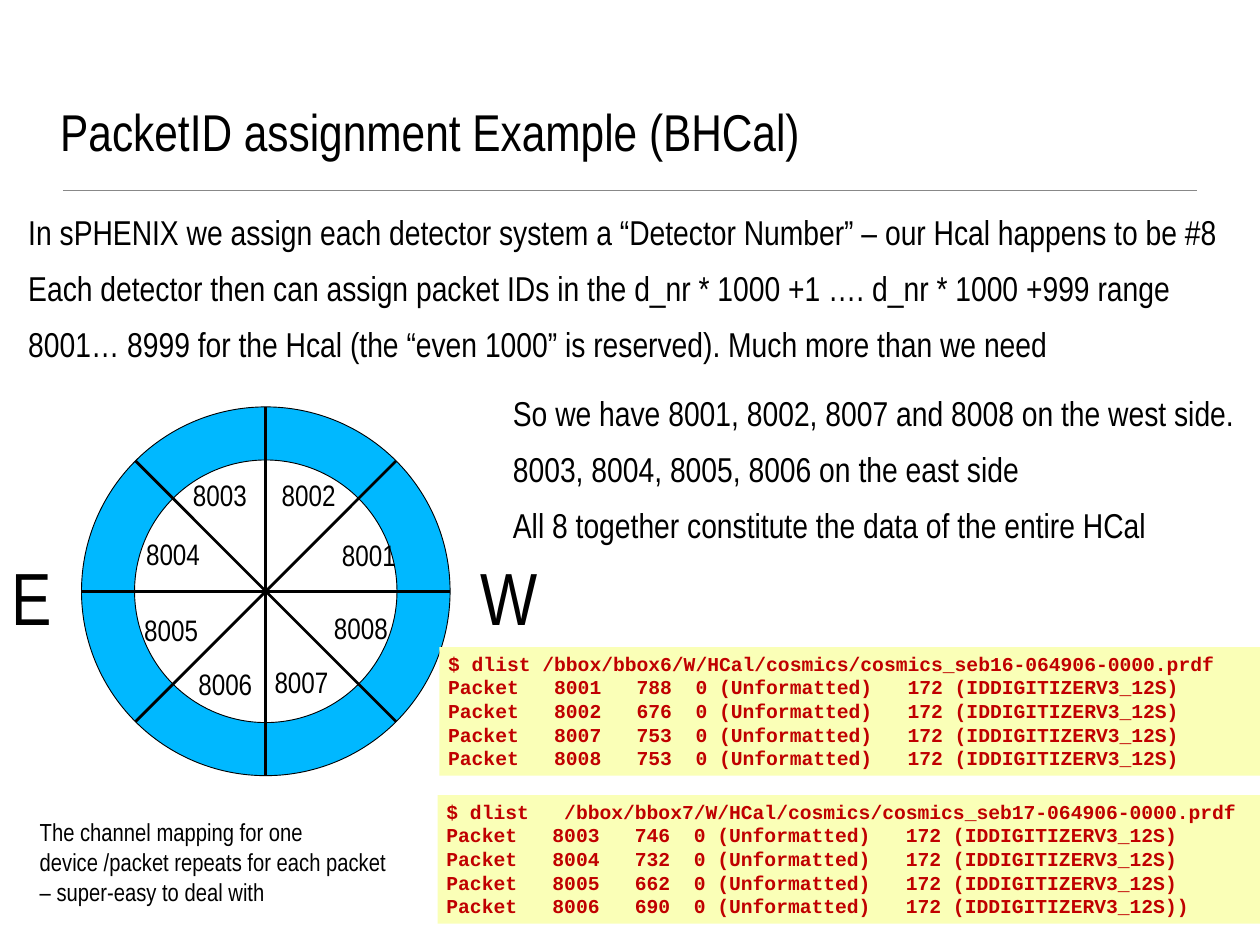
from dataclasses import dataclass
from math import cos, pi, sin

from lxml.etree import SubElement
from pptx import Presentation
from pptx.dml.color import RGBColor
from pptx.enum.shapes import MSO_CONNECTOR, MSO_SHAPE
from pptx.enum.text import MSO_ANCHOR, PP_ALIGN
from pptx.oxml.ns import qn
from pptx.util import Emu, Pt

EMU_PER_PX = 9144


def px(n):
    return Emu(round(n * EMU_PER_PX))


@dataclass(frozen=True)
class Theme:
    font: str = "Arial Narrow"
    code_font: str = "Courier New"
    ink: str = "000000"
    rule: str = "888888"
    ring: str = "00B8FF"
    code_fill: str = "FAFFB7"
    code_ink: str = "C00000"
    title: int = 42
    body: int = 28
    label: int = 24
    note: int = 20
    code: int = 16
    side: int = 60


class Deck:
    def __init__(self, theme, width, height):
        self.theme = theme
        self.prs = Presentation()
        self.prs.slide_width, self.prs.slide_height = px(width), px(height)
        self.slide = self.prs.slides.add_slide(self.prs.slide_layouts[6])

    def fill_text(self, tf, lines, size, font, color, bold=False, after=0):
        tf.word_wrap = True
        for i, line in enumerate(lines):
            p = tf.paragraphs[0] if i == 0 else tf.add_paragraph()
            p.text = line
            p.alignment = PP_ALIGN.LEFT
            p.space_after = Pt(after)
            p.font.size = Pt(size)
            p.font.name = font
            p.font.bold = bold
            p.font.color.rgb = RGBColor.from_string(color)

    def text(self, x, y, w, h, lines, size, after=0):
        tf = self.slide.shapes.add_textbox(px(x), px(y), px(w), px(h)).text_frame
        self.fill_text(tf, lines, size, self.theme.font, self.theme.ink, after=after)
        return tf

    def title(self, x, y, w, h, line):
        tf = self.text(x, y, w, h, [line], self.theme.title)
        tf.vertical_anchor = MSO_ANCHOR.BOTTOM
        tf.margin_left = tf.margin_right = tf.margin_top = tf.margin_bottom = px(6)

    def shape(self, kind, x, y, w, h, fill):
        sp = self.slide.shapes.add_shape(kind, px(x), px(y), px(w), px(h))
        sp.shadow.inherit = False
        sp.fill.solid()
        sp.fill.fore_color.rgb = RGBColor.from_string(fill)
        return sp

    def ring(self, cx, cy, radius, thickness):
        sp = self.shape(MSO_SHAPE.DONUT, cx - radius, cy - radius,
                        2 * radius, 2 * radius, self.theme.ring)
        sp.adjustments[0] = thickness
        sp.line.color.rgb = RGBColor.from_string(self.theme.ink)
        sp.line.width = Pt(0.75)

    def line(self, x1, y1, x2, y2, color, width):
        cxn = self.slide.shapes.add_connector(
            MSO_CONNECTOR.STRAIGHT, px(x1), px(y1), px(x2), px(y2))
        cxn.line.color.rgb = RGBColor.from_string(color)
        cxn.line.width = Pt(width)
        SubElement(cxn._element.spPr, qn("a:effectLst"))

    def code(self, x, y, w, h, lines):
        sp = self.shape(MSO_SHAPE.RECTANGLE, x, y, w, h, self.theme.code_fill)
        sp.line.fill.background()
        tf = sp.text_frame
        tf.vertical_anchor = MSO_ANCHOR.TOP
        self.fill_text(tf, lines, self.theme.code, self.theme.code_font,
                       self.theme.code_ink, bold=True)


def packet_listing(command, sizes, ending=""):
    rows = [f"Packet   {packet}   {size}  0 (Unformatted)   172 (IDDIGITIZERV3_12S)"
            for packet, size in sizes.items()]
    rows[-1] += ending
    return [command] + rows


def main():
    theme = Theme()
    deck = Deck(theme, 1422, 1066)

    deck.line(71, 215, 1351, 215, theme.rule, 1)
    deck.title(62, 36, 1297, 153, "PacketID assignment Example (BHCal)")
    deck.text(22, 233, 1382, 249, [
        "In sPHENIX we assign each detector system a “Detector Number” – our Hcal happens to be #8",
        "Each detector then can assign packet IDs in the d_nr * 1000 +1 …. d_nr * 1000 +999 range",
        "8001… 8999 for the Hcal (the “even 1000” is reserved). Much more than we need",
    ], theme.body, after=12)

    cx, cy, radius = 300, 667, 208
    deck.ring(cx, cy, radius, 0.144)
    for side, x in (("W", 533), ("E", 3)):
        deck.text(x, 617, 47, 111, [side], theme.side)
    for k in range(4):
        dx, dy = radius * cos(k * pi / 4), radius * sin(k * pi / 4)
        deck.line(cx - dx, cy - dy, cx + dx, cy + dy, theme.ink, 2.25)
    label_spots = [(376, 601), (308, 533), (208, 533), (155, 600),
                   (153, 685), (214, 746), (300, 744), (367, 683)]
    for packet, (x, y) in enumerate(label_spots, start=8001):
        deck.text(x, y, 86, 50, [str(packet)], theme.label)

    deck.text(569, 437, 839, 185, [
        "So we have 8001, 8002, 8007 and 8008 on the west side.",
        "8003, 8004, 8005, 8006 on the east side",
        "All 8 together constitute the data of the entire HCal",
    ], theme.body, after=12)

    deck.code(496, 730, 926, 145, packet_listing(
        "$ dlist /bbox/bbox6/W/HCal/cosmics/cosmics_seb16-064906-0000.prdf",
        {8001: 788, 8002: 676, 8007: 753, 8008: 753}))
    deck.code(494, 897, 928, 145, packet_listing(
        "$ dlist   /bbox/bbox7/W/HCal/cosmics/cosmics_seb17-064906-0000.prdf",
        {8003: 746, 8004: 732, 8005: 662, 8006: 690}, ending=")"))

    deck.text(35, 917, 413, 111, [
        "The channel mapping for one device /packet repeats for each packet – super-easy to deal with",
    ], theme.note, after=12)

    deck.prs.save("out.pptx")


if __name__ == "__main__":
    main()
